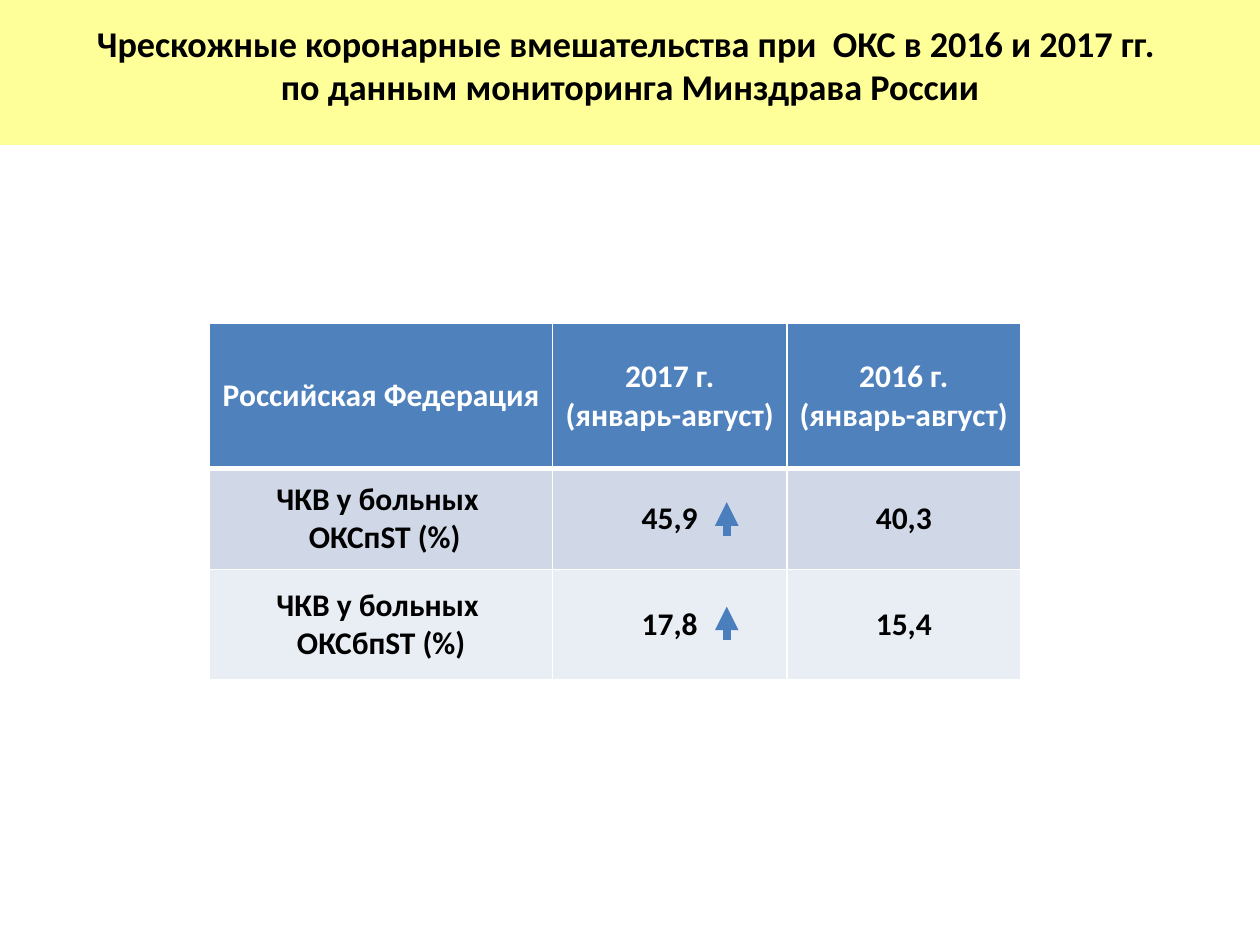
"""Build the slide comparing coronary interventions in 2016 and 2017."""
from lxml.etree import SubElement
from pptx import Presentation
from pptx.dml.color import RGBColor
from pptx.enum.shapes import MSO_CONNECTOR
from pptx.enum.text import MSO_ANCHOR, MSO_AUTO_SIZE, PP_ALIGN
from pptx.oxml.ns import qn
from pptx.util import Pt

YELLOW = RGBColor(0xFF, 0xFF, 0x99)
BLUE = RGBColor(0x4F, 0x81, 0xBD)
ARROW_BLUE = RGBColor(0x4B, 0x7E, 0xBC)
BAND_DARK = RGBColor(0xD0, 0xD8, 0xE8)
BAND_LIGHT = RGBColor(0xE9, 0xED, 0xF4)
WHITE = RGBColor(0xFF, 0xFF, 0xFF)
BLACK = RGBColor(0, 0, 0)


def style_paragraphs(frame, size, color):
    for paragraph in frame.paragraphs:
        paragraph.alignment = PP_ALIGN.CENTER
        font_format = {"name": "Calibri", "size": Pt(size), "bold": True}
        for key, value in font_format.items():
            setattr(paragraph.font, key, value)
        paragraph.font.color.rgb = color


def add_border(cell, side, width):
    props = cell._tc.get_or_add_tcPr()
    border = props.makeelement(qn(f"a:ln{side}"), {"w": str(Pt(width))})
    fill = SubElement(border, qn("a:solidFill"))
    SubElement(fill, qn("a:srgbClr"), val=str(WHITE))
    props.insert("LRTB".index(side), border)


prs = Presentation()
prs.slide_width, prs.slide_height = Pt(720), Pt(540)
slide = prs.slides.add_slide(prs.slide_layouts[5])

title = slide.shapes.title
title_box = {"left": Pt(0), "top": Pt(0), "width": Pt(720), "height": Pt(82.8)}
for key, value in title_box.items():
    setattr(title, key, value)
title.fill.solid()
title.fill.fore_color.rgb = YELLOW
heading = title.text_frame
heading.text = (
    "Чрескожные коронарные вмешательства при  ОКС в 2016 и 2017 гг. \v"
    "по данным мониторинга Минздрава России"
)
heading_format = {
    "auto_size": MSO_AUTO_SIZE.NONE,
    "vertical_anchor": MSO_ANCHOR.TOP,
    "margin_top": Pt(12),
    "word_wrap": True,
}
for key, value in heading_format.items():
    setattr(heading, key, value)
style_paragraphs(heading, 20.7, BLACK)

ROWS = [
    (82.8, BLUE, WHITE, 1, 3,
     ["Российская Федерация", "2017 г.\n(январь-август)", "2016 г.\n(январь-август)"]),
    (57.6, BAND_DARK, BLACK, 3, 1, ["ЧКВ у больных \n ОКСпST (%)", "45,9", "40,3"]),
    (63.4, BAND_LIGHT, BLACK, 1, 1, ["ЧКВ у больных  ОКСбпST (%)", "17,8", "15,4"]),
]
COLUMN_WIDTHS = [196, 133.8, 133.8]
CELL_FORMAT = {
    "vertical_anchor": MSO_ANCHOR.MIDDLE,
    "margin_left": Pt(5.4),
    "margin_right": Pt(5.4),
    "margin_top": Pt(2.8),
    "margin_bottom": Pt(2.8),
}
results = slide.shapes.add_table(
    len(ROWS), len(COLUMN_WIDTHS), Pt(119.8), Pt(184.9),
    Pt(sum(COLUMN_WIDTHS)), Pt(sum(row[0] for row in ROWS)),
).table
for column, width in zip(results.columns, COLUMN_WIDTHS):
    column.width = Pt(width)
for row, (height, fill, color, above, below, texts) in zip(results.rows, ROWS):
    row.height = Pt(height)
    for cell, text in zip(row.cells, texts):
        cell.text = text
        for key, value in CELL_FORMAT.items():
            setattr(cell, key, value)
        style_paragraphs(cell.text_frame, 18, color)
        cell.fill.solid()
        cell.fill.fore_color.rgb = fill
        for side, width in zip("LRTB", (1, 1, above, below)):
            add_border(cell, side, width)

for arrow_base in (306, 365.6):
    growth = slide.shapes.add_connector(
        MSO_CONNECTOR.STRAIGHT, Pt(415.3), Pt(arrow_base), Pt(415.3), Pt(arrow_base - 19)
    )
    growth.line.color.rgb = ARROW_BLUE
    growth.line.width = Pt(4.5)
    SubElement(growth.line._get_or_add_ln(), qn("a:tailEnd"), type="triangle")
    SubElement(growth._element.spPr, qn("a:effectLst"))

prs.save("out.pptx")
